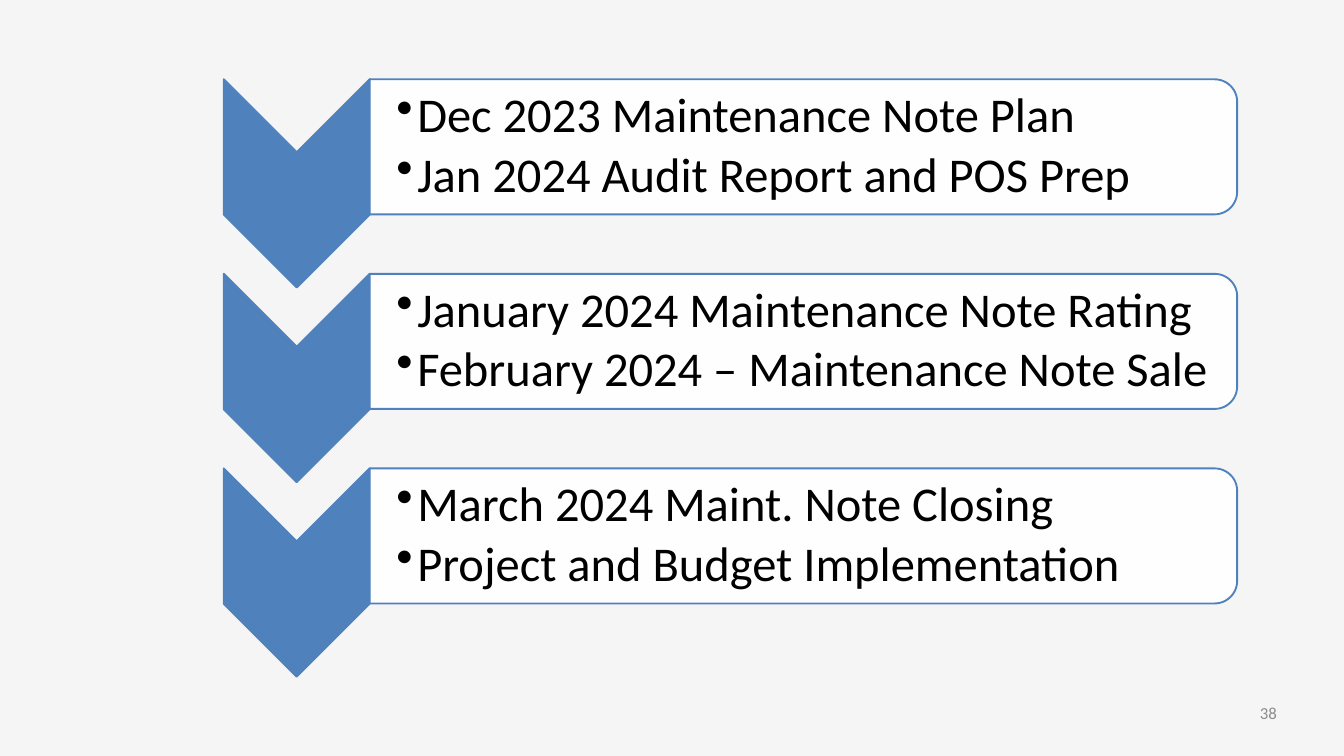
"""Build a timeline slide of three chevrons, each with a box of two steps."""
from lxml import etree
from pptx import Presentation
from pptx.dml.color import RGBColor
from pptx.enum.shapes import MSO_SHAPE
from pptx.enum.text import MSO_ANCHOR, PP_ALIGN
from pptx.oxml.ns import qn
from pptx.util import Emu, Pt

CHEVRON, BOX = MSO_SHAPE.CHEVRON, MSO_SHAPE.ROUND_2_SAME_RECTANGLE
TOP, MIDDLE = MSO_ANCHOR.TOP, MSO_ANCHOR.MIDDLE
LEFT, RIGHT = PP_ALIGN.LEFT, PP_ALIGN.RIGHT

STAGES = [
    ["Dec 2023 Maintenance Note Plan", "Jan 2024 Audit Report and POS Prep"],
    ["January 2024 Maintenance Note Rating", "February 2024 – Maintenance Note Sale"],
    ["March 2024 Maint. Note Closing", "Project and Budget Implementation"],
]
PAGE_NUMBER = "38"

FONT = "Calibri"
BACKGROUND, BLUE, WHITE, BLACK, GREY = "F5F5F5", "4F81BD", "FFFFFF", "000000", "8C8C8C"

FIRST_TOP, PITCH = 118, 289.5
CHEVRON_X, CHEVRON_W, CHEVRON_H = 333, 217, 310
BOX_X, BOX_W, BOX_H = CHEVRON_X + CHEVRON_W, 1291, 201
TEXT_W, TEXT_H = 1281, 182
INDENT = 31


def px(n):
    return Emu(round(n * 9144))


def color(value):
    return RGBColor.from_string(value)


def add_turned(s, kind, x, y, w, h, fill, alpha=100):
    """Add a shape turned by 90 degrees that covers the given area."""
    sp = s.shapes.add_shape(kind, px(x + (w - h) / 2), px(y + (h - w) / 2), px(h), px(w))
    sp.rotation = 90
    sp.shadow.inherit = False
    sp.fill.solid()
    sp.fill.fore_color.rgb = color(fill)
    if alpha < 100:
        clr = sp.fill._xPr.find(qn("a:solidFill"))[0]
        etree.SubElement(clr, qn("a:alpha"), val=str(alpha * 1000))
    sp.line.color.rgb = color(BLUE)
    sp.line.width = Pt(2)


def add_text(s, lines, x, y, w, h, size, fill, align=LEFT, anchor=TOP,
             insets=(0, 0, 0, 0), bullet=None):
    """Add a text box with one paragraph for each line."""
    tf = s.shapes.add_textbox(px(x), px(y), px(w), px(h)).text_frame
    tf.word_wrap = True
    tf.vertical_anchor = anchor
    tf.margin_left, tf.margin_top, tf.margin_right, tf.margin_bottom = map(px, insets)
    for i, line in enumerate(lines):
        p = tf.add_paragraph() if i else tf.paragraphs[0]
        p.alignment = align
        if bullet:
            p.level = 1
            p.line_spacing = 0.9
            p.space_after = Pt(7.5)
            pPr = p._p.get_or_add_pPr()
            pPr.set("marL", str(px(INDENT)))
            pPr.set("indent", str(-px(INDENT)))
            etree.SubElement(pPr, qn("a:buChar"), char=bullet)
        r = p.add_run()
        r.text = line
        r.font.name, r.font.size = FONT, Pt(size)
        r.font.color.rgb = color(fill)


def main():
    """Draw the stages and the page number, then save."""
    prs = Presentation()
    prs.slide_width, prs.slide_height = px(2000), px(1125)
    s = prs.slides.add_slide(prs.slide_layouts[6])
    s.background.fill.solid()
    s.background.fill.fore_color.rgb = color(BACKGROUND)

    add_text(s, [PAGE_NUMBER], 1440, 1046, 460, 56, 18, GREY, align=RIGHT)
    for i, steps in enumerate(STAGES):
        top = FIRST_TOP + i * PITCH
        add_turned(s, CHEVRON, CHEVRON_X, top, CHEVRON_W, CHEVRON_H, BLUE)
        add_turned(s, BOX, BOX_X, top, BOX_W, BOX_H, WHITE, alpha=90)
        add_text(s, steps, BOX_X, top + (BOX_H - TEXT_H) / 2, TEXT_W, TEXT_H, 52, BLACK,
                 anchor=MIDDLE, insets=(40, 4, 4, 4), bullet="•")
    prs.save("out.pptx")


if __name__ == "__main__":
    main()
